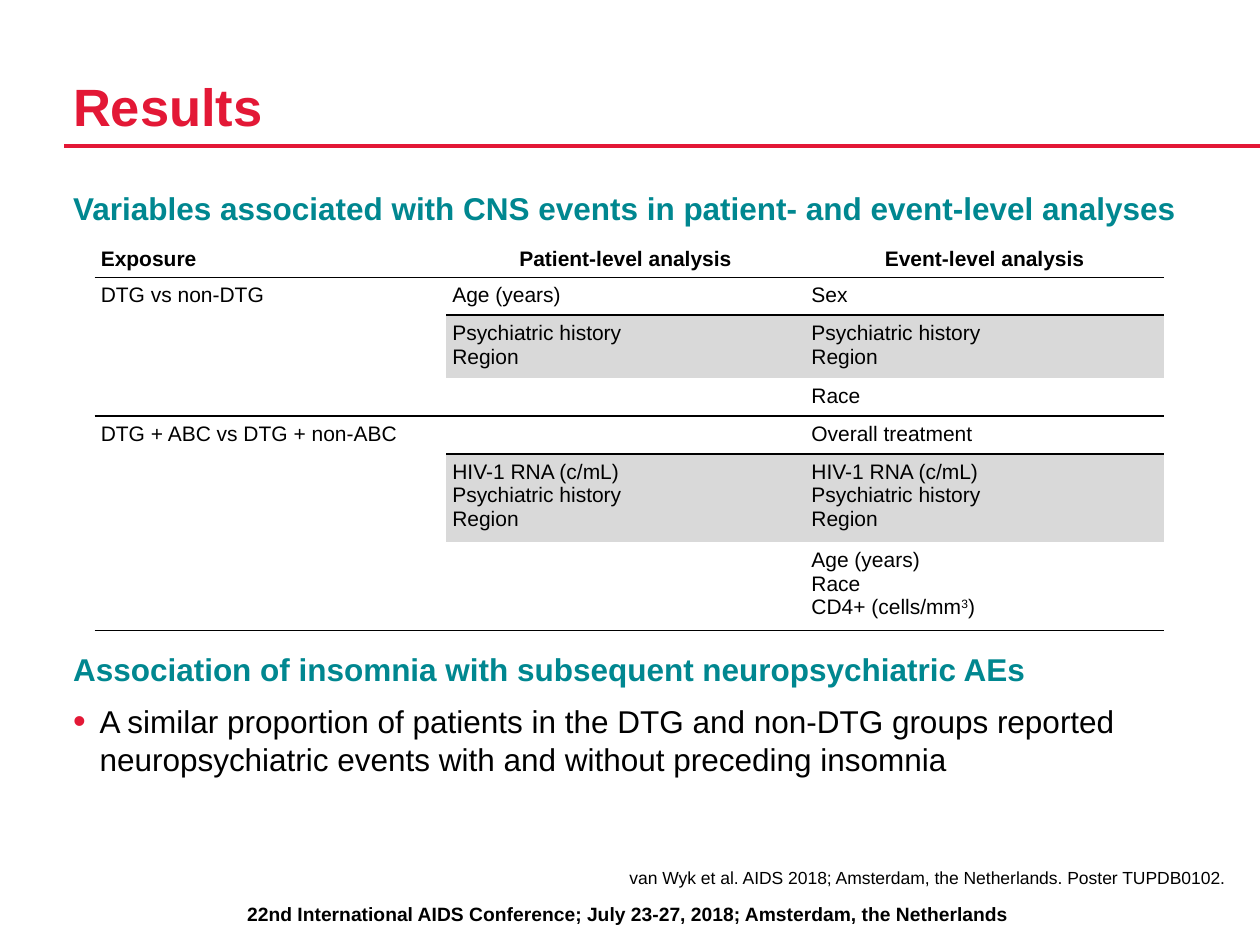
from lxml import etree
from pptx import Presentation
from pptx.dml.color import RGBColor
from pptx.enum.shapes import MSO_CONNECTOR
from pptx.enum.text import MSO_ANCHOR, PP_ALIGN
from pptx.oxml.ns import qn
from pptx.util import Inches, Pt

LEFT, CENTER, RIGHT = PP_ALIGN.LEFT, PP_ALIGN.CENTER, PP_ALIGN.RIGHT
TOP, BOTTOM = MSO_ANCHOR.TOP, MSO_ANCHOR.BOTTOM
STRAIGHT = MSO_CONNECTOR.STRAIGHT
FONT = "Arial"
RED, TEAL, BLACK, GREY = "E31836", "008790", "000000", "D9D9D9"
PLAIN_TABLE = "{2D5ABB26-0587-4C30-8999-92F81FD0307C}"

HEADER = ["Exposure", "Patient-level analysis", "Event-level analysis"]
GROUPS = [
    ("DTG vs non-DTG", [
        ("Age (years)", "Sex"),
        ("Psychiatric history\nRegion", "Psychiatric history\nRegion"),
        ("", "Race"),
    ]),
    ("DTG + ABC vs DTG + non-ABC", [
        ("", "Overall treatment"),
        ("HIV-1 RNA (c/mL)\nPsychiatric history\nRegion",
         "HIV-1 RNA (c/mL)\nPsychiatric history\nRegion"),
        ("", "Age (years)\nRace\nCD4+ (cells/mm^3)"),
    ]),
]
COLUMN_WIDTHS = [2.79, 2.85, 2.85]
ROW_HEIGHTS = [0.29, 0.29, 0.47, 0.29, 0.29, 0.66, 0.66]


def rgb(value):
    """Return the colour for a hex string."""
    return RGBColor.from_string(value)


def style_font(font, size, color=BLACK, bold=False):
    """Apply face, size, colour and weight to a font."""
    font.name = FONT
    font.size = Pt(size)
    font.bold = bold
    font.color.rgb = rgb(color)


def set_margins(holder, size):
    """Give a frame or cell the same inset on every side."""
    holder.margin_left = holder.margin_right = Inches(size)
    holder.margin_top = holder.margin_bottom = Inches(size)


def add_title(slide, text):
    """Place and format the title placeholder."""
    title = slide.shapes.title
    title.left, title.top = Inches(0.58), Inches(0.17)
    title.width, title.height = Inches(8.25), Inches(0.92)
    frame = title.text_frame
    set_margins(frame, 0)
    frame.vertical_anchor = BOTTOM
    frame.text = text
    paragraph = frame.paragraphs[0]
    paragraph.alignment = LEFT
    paragraph.line_spacing = Pt(35)
    style_font(paragraph.runs[0].font, 30, RED, True)


def add_rule(slide, left, right, y):
    """Draw the line under the title."""
    rule = slide.shapes.add_connector(
        STRAIGHT, Inches(left), Inches(y), Inches(right), Inches(y))
    rule.line.color.rgb = rgb(RED)
    rule.line.width = Pt(2)
    etree.SubElement(rule._element.spPr, qn("a:effectLst"))


def add_text(slide, text, box, size, color=BLACK, bold=False, align=LEFT):
    """Add a one-paragraph text box and return the paragraph."""
    frame = slide.shapes.add_textbox(*map(Inches, box)).text_frame
    frame.word_wrap = True
    set_margins(frame, 0)
    frame.text = text
    paragraph = frame.paragraphs[0]
    paragraph.alignment = align
    paragraph.space_after = Pt(3)
    style_font(paragraph.runs[0].font, size, color, bold)
    return paragraph


def add_bullet(paragraph):
    """Give a paragraph a red bullet with a hanging indent."""
    properties = paragraph._p.get_or_add_pPr()
    properties.set("marL", str(Inches(0.21)))
    properties.set("indent", str(-Inches(0.21)))
    color = etree.SubElement(properties, qn("a:buClr"))
    etree.SubElement(color, qn("a:srgbClr"), val=RED)
    etree.SubElement(properties, qn("a:buSzPct"), val="115000")
    etree.SubElement(properties, qn("a:buFont"), typeface=FONT)
    etree.SubElement(properties, qn("a:buChar"), char="•")


def add_border(cell, side):
    """Draw a thin black border on one side of a cell."""
    border = etree.SubElement(
        cell._tc.get_or_add_tcPr(), qn(f"a:{side}"), w=str(Pt(1)))
    fill = etree.SubElement(border, qn("a:solidFill"))
    etree.SubElement(fill, qn("a:srgbClr"), val=BLACK)


def fill_cell(cell, text, bold=False, align=LEFT, anchor=TOP):
    """Write a cell, raising the character after a caret."""
    set_margins(cell, 0.05)
    cell.vertical_anchor = anchor
    cell.text = text
    for paragraph in cell.text_frame.paragraphs:
        paragraph.alignment = align
        base, caret, rest = paragraph.text.partition("^")
        if caret:
            paragraph.text = base
            for part in (rest[0], rest[1:]):
                paragraph.add_run().text = part
            paragraph.runs[1].font._element.set("baseline", "30000")
        for run in paragraph.runs:
            style_font(run.font, 12, bold=bold)
        if not paragraph.runs:
            etree.SubElement(paragraph._p, qn("a:endParaRPr"), sz="1200")


def add_variables_table(slide):
    """Add the table of variables for both exposure groups."""
    rows = [HEADER]
    for exposure, analyses in GROUPS:
        for index, pair in enumerate(analyses):
            rows.append(["" if index else exposure, *pair])
    table = slide.shapes.add_table(
        len(rows), len(HEADER), Inches(0.75), Inches(1.9),
        Inches(sum(COLUMN_WIDTHS)), Inches(sum(ROW_HEIGHTS))).table
    table._tbl.tblPr.find(qn("a:tableStyleId")).text = PLAIN_TABLE
    table.first_row = table.horz_banding = False
    for column, width in zip(table.columns, COLUMN_WIDTHS):
        column.width = Inches(width)
    for row, height in zip(table.rows, ROW_HEIGHTS):
        row.height = Inches(height)

    group_starts = (1, 4)
    for r, texts in enumerate(rows):
        for c, text in enumerate(texts):
            cell = table.cell(r, c)
            if r == 0:
                fill_cell(cell, text, True, CENTER if c else LEFT, BOTTOM)
            else:
                fill_cell(cell, text)
            if r in group_starts:
                add_border(cell, "lnT")
            if r + 1 in group_starts or r == len(rows) - 1 or (c, r) == (0, 4):
                add_border(cell, "lnB")
            if c and r - 1 in group_starts:
                cell.fill.solid()
                cell.fill.fore_color.rgb = rgb(GREY)
            else:
                cell.fill.background()
    for start in group_starts:
        table.cell(start, 0).merge(table.cell(start + 2, 0))


def main():
    """Build the results slide."""
    deck = Presentation()
    deck.slide_width, deck.slide_height = Inches(10), Inches(7.5)
    slide = deck.slides.add_slide(deck.slide_layouts[5])
    add_text(slide, "22nd International AIDS Conference; July 23-27, 2018; "
             "Amsterdam, the Netherlands", (0.06, 7.16, 9.85, 0.2), 11,
             bold=True, align=CENTER)
    add_rule(slide, 0.51, 10, 1.16)
    add_title(slide, "Results")
    add_text(slide, "Variables associated with CNS events in patient- and "
             "event-level analyses", (0.58, 1.5, 8.92, 0.42), 18, TEAL, True)
    add_variables_table(slide)
    add_text(slide, "Association of insomnia with subsequent neuropsychiatric "
             "AEs", (0.58, 5.16, 8.92, 0.42), 18, TEAL, True)
    finding = add_text(
        slide, "A similar proportion of patients in the DTG and non-DTG groups "
        "reported neuropsychiatric events with and without preceding insomnia",
        (0.58, 5.57, 8.92, 1.14), 18)
    add_bullet(finding)
    add_text(slide, "van Wyk et al. AIDS 2018; Amsterdam, the Netherlands. "
             "Poster TUPDB0102.", (0.58, 6.88, 9.14, 0.2), 10, align=RIGHT)
    deck.save("out.pptx")


if __name__ == "__main__":
    main()
